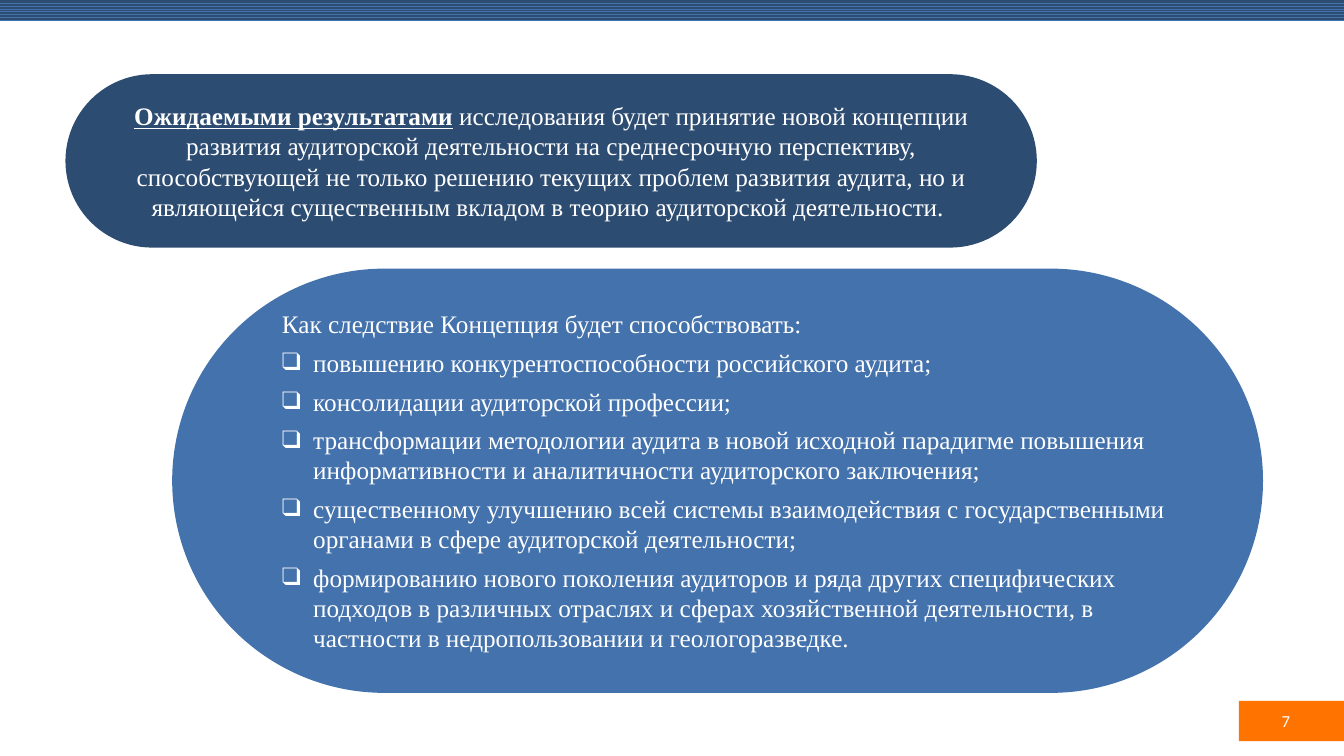
import pptx
import pptx.util
import pptx.dml.color
import pptx.enum.dml
import pptx.enum.shapes
import pptx.enum.text
import lxml.etree
from pptx.util import Cm

SHAPE = pptx.enum.shapes.MSO_SHAPE
ALIGN = pptx.enum.text.PP_ALIGN
MIDDLE = pptx.enum.text.MSO_ANCHOR.MIDDLE
NAVY, BLUE, ORANGE, WHITE = "2D4C72", "4472AC", "FF7400", "FFFFFF"
SERIF = "Times New Roman"
DRAWING = "{http://schemas.openxmlformats.org/drawingml/2006/main}"


def rgb(color):
    return pptx.dml.color.RGBColor.from_string(color)


def add_text(p, text, size=18, font=SERIF, color=WHITE, bold=False, underline=False):
    r = p.add_run()
    r.text = text
    r.font.size = pptx.util.Pt(size)
    r.font.name = font
    r.font.color.rgb = rgb(color)
    r.font.bold = bold
    r.font.underline = underline


prs = pptx.Presentation()
prs.slide_width = Cm(33.87)
prs.slide_height = Cm(19.05)
s = prs.slides.add_slide(prs.slide_layouts[6])

panels = []
for kind, color, left, top, width, height in [
    (SHAPE.RECTANGLE, NAVY, 0, 0, 33.87, 0.53),
    (SHAPE.RECTANGLE, ORANGE, 31.22, 17.66, 2.65, 1.02),
    (SHAPE.ROUNDED_RECTANGLE, BLUE, 4.34, 6.77, 27.49, 10.69),
    (SHAPE.ROUNDED_RECTANGLE, NAVY, 1.65, 1.87, 24.48, 4.37),
]:
    sp = s.shapes.add_shape(kind, Cm(left), Cm(top), Cm(width), Cm(height))
    sp.shadow.inherit = False
    sp.fill.solid()
    sp.fill.fore_color.rgb = rgb(color)
    sp.line.fill.background()
    if kind == SHAPE.ROUNDED_RECTANGLE:
        sp.adjustments[0] = 0.5
        sp.text_frame.word_wrap = True
        sp.text_frame.vertical_anchor = MIDDLE
    panels.append(sp)
band, number_block, effects_panel, results_panel = panels

band.fill.patterned()
band.fill.pattern = pptx.enum.dml.MSO_PATTERN.ZIG_ZAG
band.fill.fore_color.rgb = rgb(BLUE)
band.fill.back_color.rgb = rgb(NAVY)

tf = s.shapes.add_textbox(Cm(25.15), Cm(17.65), Cm(7.61), Cm(1.02)).text_frame
tf.word_wrap = True
tf.vertical_anchor = MIDDLE
p = tf.paragraphs[0]
p.alignment = ALIGN.RIGHT
add_text(p, "7", size=12, font="Calibri")

p = results_panel.text_frame.paragraphs[0]
p.alignment = ALIGN.CENTER
add_text(p, "Ожидаемыми результатами", bold=True, underline=True)
add_text(p, " исследования будет принятие новой концепции развития аудиторской деятельности "
            "на среднесрочную перспективу, способствующей не только решению текущих проблем "
            "развития аудита, но и являющейся существенным вкладом в теорию аудиторской деятельности. ")

effects = [
    "Как следствие Концепция будет способствовать:",
    "повышению конкурентоспособности российского аудита;",
    "консолидации аудиторской профессии;",
    "трансформации методологии аудита в новой исходной парадигме повышения "
    "информативности и аналитичности аудиторского заключения;",
    "существенному улучшению всей системы взаимодействия с государственными "
    "органами в сфере аудиторской деятельности;",
    "формированию нового поколения аудиторов и ряда других специфических подходов "
    "в различных отраслях и сферах хозяйственной деятельности, в частности "
    "в недропользовании и геологоразведке.",
]
tf = effects_panel.text_frame
for i, text in enumerate(effects):
    p = tf.add_paragraph() if i else tf.paragraphs[0]
    p.alignment = ALIGN.LEFT
    p.space_after = pptx.util.Pt(6)
    pPr = p._p.get_or_add_pPr()
    pPr.set("marL", str(Cm(1.74 if i else 0.95)))
    pPr.set("indent", str(Cm(-0.79 if i else 0)))
    if i:
        lxml.etree.SubElement(pPr, DRAWING + "buFont", typeface=SERIF)
        lxml.etree.SubElement(pPr, DRAWING + "buChar", char="❑")
    add_text(p, text)

prs.save("out.pptx")
